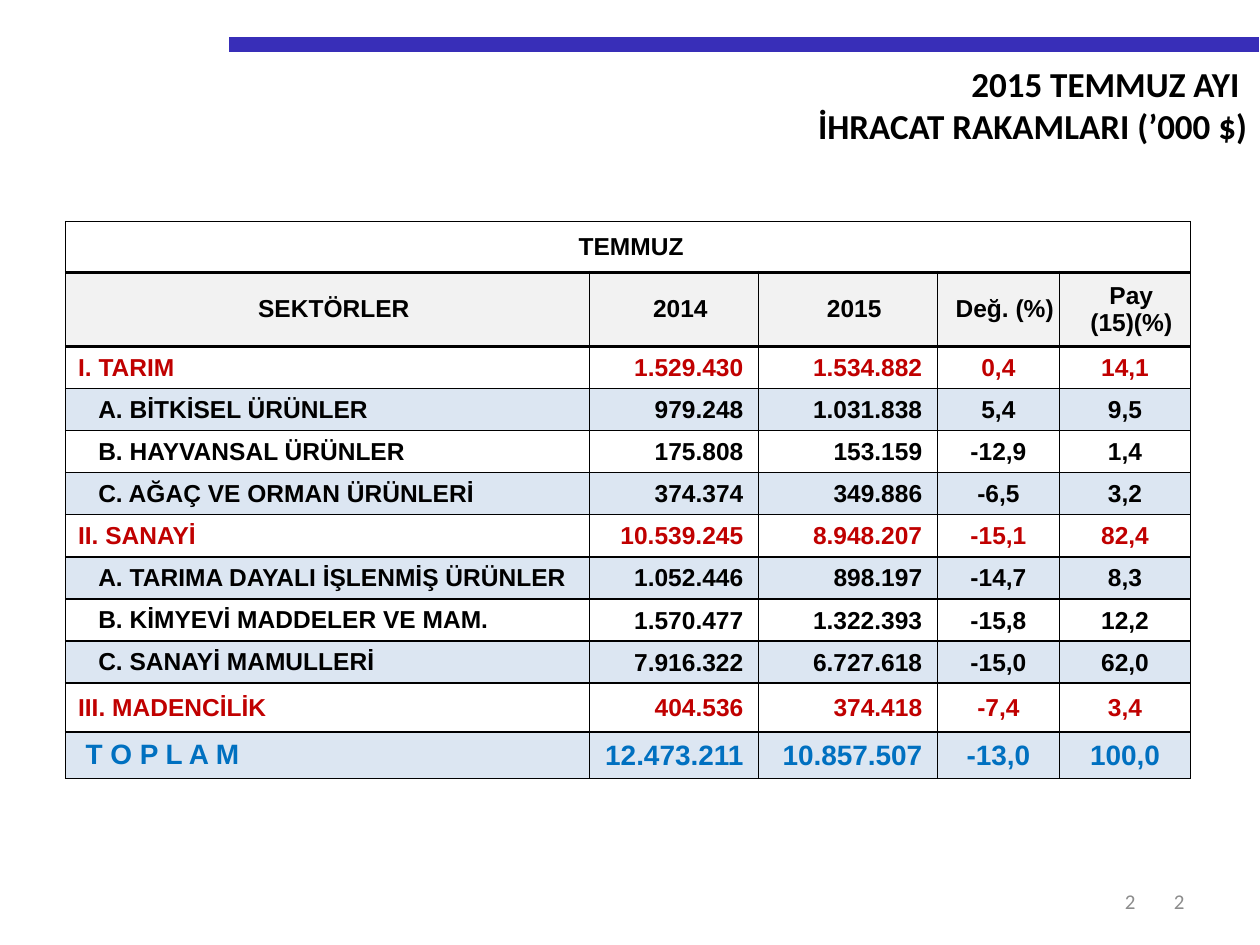
"""Build the July 2015 export figures slide."""
from lxml.etree import SubElement
from pptx import Presentation
from pptx.dml.color import RGBColor
from pptx.enum.shapes import MSO_CONNECTOR
from pptx.enum.text import MSO_ANCHOR, PP_ALIGN
from pptx.oxml.ns import qn
from pptx.util import Inches, Pt

BLACK = RGBColor(0, 0, 0)
GREY = RGBColor(0x8C, 0x8C, 0x8C)
PURPLE = RGBColor(0x38, 0x2E, 0xB8)
RED = RGBColor(0xC0, 0, 0)
BLUE = RGBColor(0, 0x70, 0xC0)
HEADER_FILL = RGBColor(0xF2, 0xF2, 0xF2)
BAND_FILL = RGBColor(0xDC, 0xE6, 0xF2)

LEFT, CENTER, RIGHT = PP_ALIGN.LEFT, PP_ALIGN.CENTER, PP_ALIGN.RIGHT

TITLE = ["2015 TEMMUZ AYI ", "İHRACAT RAKAMLARI (’000 $)"]
PAGE_NUMBERS = [("2", (7.17, 6.95, 2.33, 0.4)), ("2", (7.01, 6.95, 2.1, 0.4))]
PERIOD = "TEMMUZ"
HEADERS = ["SEKTÖRLER", "2014", "2015", "Değ. (%)", "Pay\n(15)(%)"]
SECTORS = [
    ("main", "I. TARIM", "1.529.430", "1.534.882", "0,4", "14,1"),
    ("sub", "A. BİTKİSEL ÜRÜNLER", "979.248", "1.031.838", "5,4", "9,5"),
    ("sub", "B. HAYVANSAL ÜRÜNLER", "175.808", "153.159", "-12,9", "1,4"),
    ("sub", "C. AĞAÇ VE ORMAN ÜRÜNLERİ", "374.374", "349.886", "-6,5", "3,2"),
    ("main", "II. SANAYİ", "10.539.245", "8.948.207", "-15,1", "82,4"),
    ("sub", "A. TARIMA DAYALI İŞLENMİŞ ÜRÜNLER", "1.052.446", "898.197", "-14,7", "8,3"),
    ("sub", "B. KİMYEVİ MADDELER VE MAM.", "1.570.477", "1.322.393", "-15,8", "12,2"),
    ("sub", "C. SANAYİ MAMULLERİ", "7.916.322", "6.727.618", "-15,0", "62,0"),
    ("main", "III. MADENCİLİK", "404.536", "374.418", "-7,4", "3,4"),
    ("total", "T O P L A M", "12.473.211", "10.857.507", "-13,0", "100,0"),
]
LEVELS = {
    "main": {"color": RED, "size": 14, "indent": 0.1},
    "sub": {"color": BLACK, "size": 14, "indent": 0.26},
    "total": {"color": BLUE, "size": 16, "indent": 0.16},
}
COL_WIDTHS = [4.16, 1.34, 1.42, 0.97, 1.04]
ROW_HEIGHTS = [0.4, 0.59, 0.31, 0.31, 0.33, 0.32, 0.31, 0.28, 0.32, 0.31, 0.39, 0.34]
NUMBER_INSETS = (0.01, 0.01, 0.12, 0)
PERCENT_INSETS = (0.01, 0.01, 0.01, 0)


def write(tf, lines, align, color, size, name, bold=True):
    for i, line in enumerate(lines):
        p = tf.paragraphs[0] if i == 0 else tf.add_paragraph()
        p.alignment = align
        r = p.add_run()
        r.text = line
        r.font.color.rgb = color
        for key, value in {"size": Pt(size), "name": name, "bold": bold}.items():
            setattr(r.font, key, value)


def add_text(s, box, lines, **style):
    tf = s.shapes.add_textbox(*map(Inches, box)).text_frame
    tf.word_wrap = True
    write(tf, lines, RIGHT, **style)
    return tf


def set_borders(cell, top, bottom):
    tc_pr = cell._tc.get_or_add_tcPr()
    for side, width in zip("LRTB", (1, 1, top, bottom)):
        ln = SubElement(tc_pr, qn(f"a:ln{side}"), w=str(Pt(width)))
        SubElement(SubElement(ln, qn("a:solidFill")), qn("a:srgbClr"), val=str(BLACK))


def fill_cell(cell, text, align, insets, fill=None, color=BLACK, size=14):
    sides = ("margin_left", "margin_top", "margin_right", "margin_bottom")
    for side, inset in zip(sides, insets):
        setattr(cell, side, Inches(inset))
    cell.vertical_anchor = MSO_ANCHOR.MIDDLE
    if fill is None:
        cell.fill.background()
    else:
        cell.fill.solid()
        cell.fill.fore_color.rgb = fill
    write(cell.text_frame, text.split("\n"), align, color, size, "Arial")


def add_sector_table(s):
    frame = s.shapes.add_table(len(ROW_HEIGHTS), len(COL_WIDTHS), Inches(0.52),
                               Inches(1.76), Inches(8.94), Inches(sum(ROW_HEIGHTS)))
    table = frame.table
    table.first_row = table.horz_banding = False
    for column, width in zip(table.columns, COL_WIDTHS):
        column.width = Inches(width)
    for i, (row, height) in enumerate(zip(table.rows, ROW_HEIGHTS)):
        row.height = Inches(height)
        for cell in row.cells:
            set_borders(cell, 2 if i in (1, 2) else 1, 2 if i in (0, 1) else 1)

    table.cell(0, 0).merge(table.cell(0, len(COL_WIDTHS) - 1))
    fill_cell(table.cell(0, 0), PERIOD, CENTER, (0.15, 0.05, 0.1, 0.05))
    for j, header in enumerate(HEADERS):
        fill_cell(table.cell(1, j), header, CENTER, (0.1, 0.05, 0, 0.05), HEADER_FILL)
    for i, (level, *values) in enumerate(SECTORS):
        style = LEVELS[level]
        label = (LEFT, (style["indent"], 0.05, 0, 0.05))
        formats = [label] + [(RIGHT, NUMBER_INSETS)] * 2 + [(CENTER, PERCENT_INSETS)] * 2
        for j, (value, (align, insets)) in enumerate(zip(values, formats)):
            fill_cell(table.cell(i + 2, j), value, align, insets,
                      BAND_FILL if i % 2 else None, style["color"], style["size"])


def main():
    prs = Presentation()
    prs.slide_width, prs.slide_height = Inches(10), Inches(7.5)
    s = prs.slides.add_slide(prs.slide_layouts[6])

    rule = s.shapes.add_connector(MSO_CONNECTOR.STRAIGHT, Inches(1.82), Inches(0.35),
                                  Inches(9.99), Inches(0.35))
    rule.line.color.rgb = PURPLE
    rule.line.width = Pt(8.5)
    SubElement(rule._element.spPr, qn("a:effectLst"))

    for number, box in PAGE_NUMBERS:
        tf = add_text(s, box, [number], color=GREY, size=12, name="Calibri", bold=False)
        tf.vertical_anchor = MSO_ANCHOR.MIDDLE
    add_text(s, (1.06, 0.45, 8.94, 0.77), TITLE, color=BLACK, size=20, name="Calibri")
    add_sector_table(s)
    prs.save("out.pptx")


if __name__ == "__main__":
    main()
